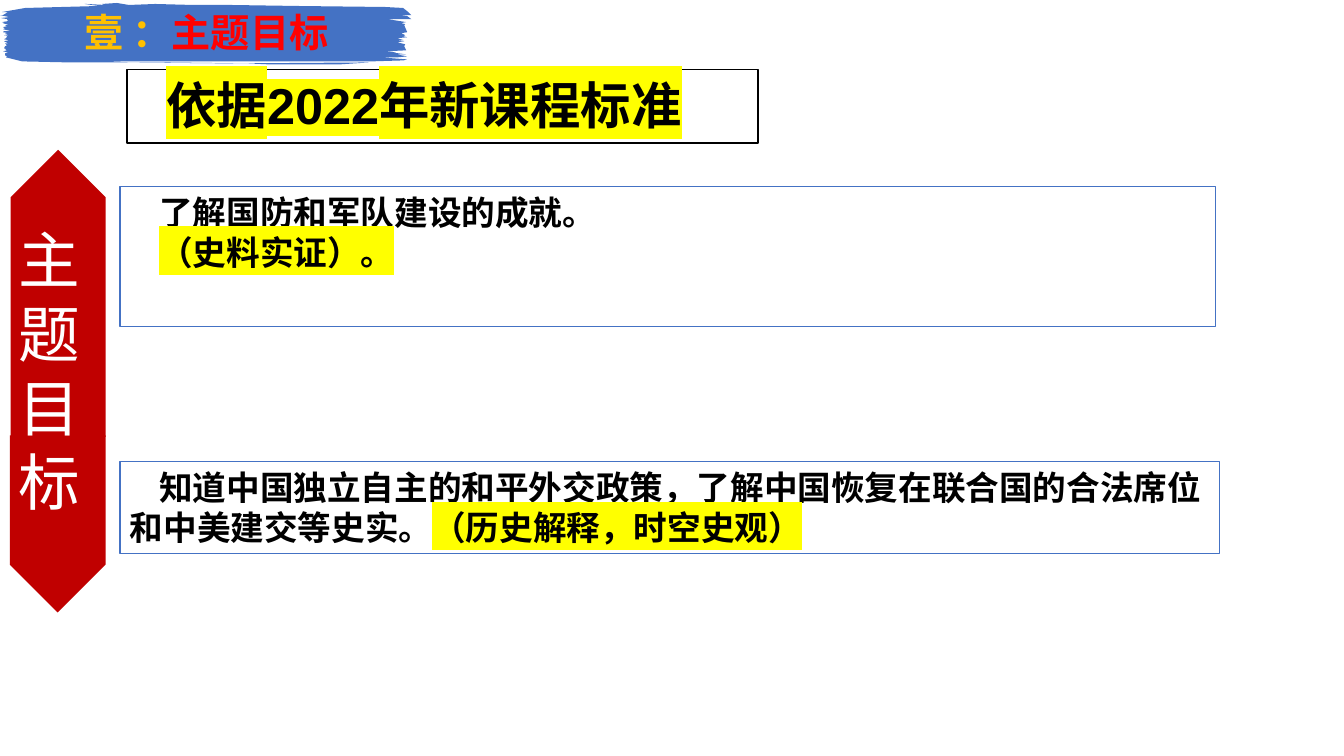
from lxml import etree
from pptx import Presentation
from pptx import util as u
from pptx.dml.color import RGBColor
from pptx.enum import shapes, text
from pptx.oxml import ns

Pt = u.Pt
COLORS = {
    "blue": "4472C4", "red": "C00000", "bright_red": "FF0000", "gold": "FFC000",
    "yellow": "FFFF00", "white": "FFFFFF", "black": "000000",
}
CJK = "Noto Sans CJK SC"
BRUSH_UNIT = Pt(0.72)
BRUSH_EDGE = [
    (1, 17), (7, 18), (8, 20), (2, 21), (5, 22), (3, 22), (9, 24), (5, 24), (7, 25),
    (3, 26), (5, 27), (3, 28), (11, 30), (4, 30), (3, 31), (9, 32), (5, 32), (8, 33),
    (4, 34), (11, 35), (7, 35), (6, 37), (4, 38), (9, 39), (4, 40), (8, 42), (5, 42),
    (6, 43), (7, 44), (5, 45), (4, 47), (7, 48), (5, 48), (7, 49), (3, 50), (8, 51),
    (5, 52), (5, 54), (7, 55), (6, 56), (22, 60), (69, 61), (163, 61), (245, 62),
    (269, 63), (336, 63), (366, 61), (230, 62), (131, 61), (103, 60), (302, 60),
    (368, 60), (400, 59), (404, 58), (378, 56), (394, 56), (404, 55), (393, 53),
    (403, 53), (388, 51), (393, 51), (383, 50), (403, 49), (402, 47), (401, 45),
    (402, 43), (394, 41), (401, 40), (394, 39), (401, 39), (394, 37), (404, 36),
    (400, 35), (402, 34), (398, 32), (404, 31), (401, 24), (402, 23), (398, 22),
    (403, 21), (384, 18), (408, 18), (404, 15), (396, 14), (408, 14), (405, 11),
    (400, 7), (382, 6), (296, 5), (228, 4), (191, 4), (154, 3), (128, 4), (116, 2),
    (101, 3), (104, 4), (86, 3), (84, 3), (98, 5), (25, 7), (2, 11), (8, 11),
    (3, 14), (0, 14), (9, 16),
]


def rgb(color):
    return RGBColor.from_string(COLORS[color])


def write(paragraph, words, size=24, color="black", bold=True, latin=CJK, highlight=None):
    run = paragraph.add_run()
    run.text = words
    font = run.font
    font.size, font.bold, font.name = Pt(size), bold, latin
    font.color.rgb = rgb(color)
    properties = font.fill._xPr
    if highlight:
        mark = etree.Element(ns.qn("a:highlight"))
        etree.SubElement(mark, ns.qn("a:srgbClr")).set("val", COLORS[highlight])
        properties.find(ns.qn("a:solidFill")).addnext(mark)
    etree.SubElement(properties, ns.qn("a:ea")).set("typeface", CJK)


def paint(outline, fill, line=None):
    outline.shadow.inherit = False
    outline.fill.solid()
    outline.fill.fore_color.rgb = rgb(fill)
    if line:
        outline.line.color.rgb = rgb(line)
        outline.line.width = Pt(1)
    else:
        outline.line.fill.background()


def section_heading(slide, left, top, width, height):
    edge = slide.shapes.build_freeform(*BRUSH_EDGE[0], scale=BRUSH_UNIT)
    edge.add_line_segments(BRUSH_EDGE[1:], close=True)
    paint(edge.convert_to_shape(Pt(left), Pt(top)), "blue")

    heading = slide.shapes.title
    heading.left, heading.top = Pt(left), Pt(top)
    heading.width, heading.height = Pt(width), Pt(height)
    frame = heading.text_frame
    frame.margin_top = frame.margin_bottom = 0
    frame.vertical_anchor = text.MSO_ANCHOR.MIDDLE
    line = frame.paragraphs[0]
    line.alignment = text.PP_ALIGN.CENTER
    write(line, "壹 ：", size=28, color="gold")
    write(line, "主题目标", size=28, color="bright_red")
    heading.element.getparent().append(heading.element)


def pentagon(slide, left, top, width, height, rotation):
    center_x, center_y = left + width / 2, top + height / 2
    tip = slide.shapes.add_shape(
        shapes.MSO_SHAPE.PENTAGON, Pt(center_x - height / 2),
        Pt(center_y - width / 2), Pt(height), Pt(width))
    tip.rotation = rotation
    paint(tip, "red")


def side_banner(slide, left, top, width, height):
    upper = 205
    pentagon(slide, left + 0.5, top, width, upper, 270)
    pentagon(slide, left, top + upper - 1, width + 0.5, height - upper + 1, 90)
    label = slide.shapes.add_textbox(
        Pt(left - 0.5), Pt(top + 48), Pt(52.5), Pt(218))
    label.text_frame.word_wrap = True
    line = label.text_frame.paragraphs[0]
    line.line_spacing = Pt(52.8)
    write(line, "主题目标", size=44, color="white", bold=False)


def framed_text(slide, left, top, width, height, lines, border="blue", size=24):
    frame_box = slide.shapes.add_shape(
        shapes.MSO_SHAPE.RECTANGLE, Pt(left), Pt(top), Pt(width), Pt(height))
    paint(frame_box, "white", border)
    frame = frame_box.text_frame
    frame.word_wrap = True
    frame.vertical_anchor = text.MSO_ANCHOR.TOP
    for index, pieces in enumerate(lines):
        line = frame.add_paragraph() if index else frame.paragraphs[0]
        line.alignment = text.PP_ALIGN.LEFT
        line.line_spacing = Pt(size * 1.2)
        line._p.get_or_add_pPr().set("indent", str(Pt(21)))
        for words, look in pieces:
            write(line, words, size=size, **look)


def main():
    deck = Presentation()
    deck.slide_width, deck.slide_height = Pt(960), Pt(540)
    slide = deck.slides.add_slide(deck.slide_layouts[5])
    marked = {"highlight": "yellow"}

    section_heading(slide, 0, 0.7, 295, 44)
    side_banner(slide, 7, 107, 68, 330.5)
    framed_text(slide, 90.7, 49.7, 450.7, 52.6, [
        [("依据2022年新课程标准", {"latin": "Arial", **marked})],
    ], border="black", size=36)
    framed_text(slide, 85.7, 133.2, 782.6, 100, [
        [("了解国防和军队建设的成就。", {})],
        [("（史料实证", {"latin": "Times New Roman", **marked}), ("）。", marked)],
    ])
    framed_text(slide, 85.7, 329.8, 785.5, 65.5, [
        [("知道中国独立自主的和平外交政策，了解中国恢复在联合国的合法席位和中美建交等史实。", {}),
         ("（历史解释，时空史观）", marked)],
    ])
    deck.save("out.pptx")


if __name__ == "__main__":
    main()
